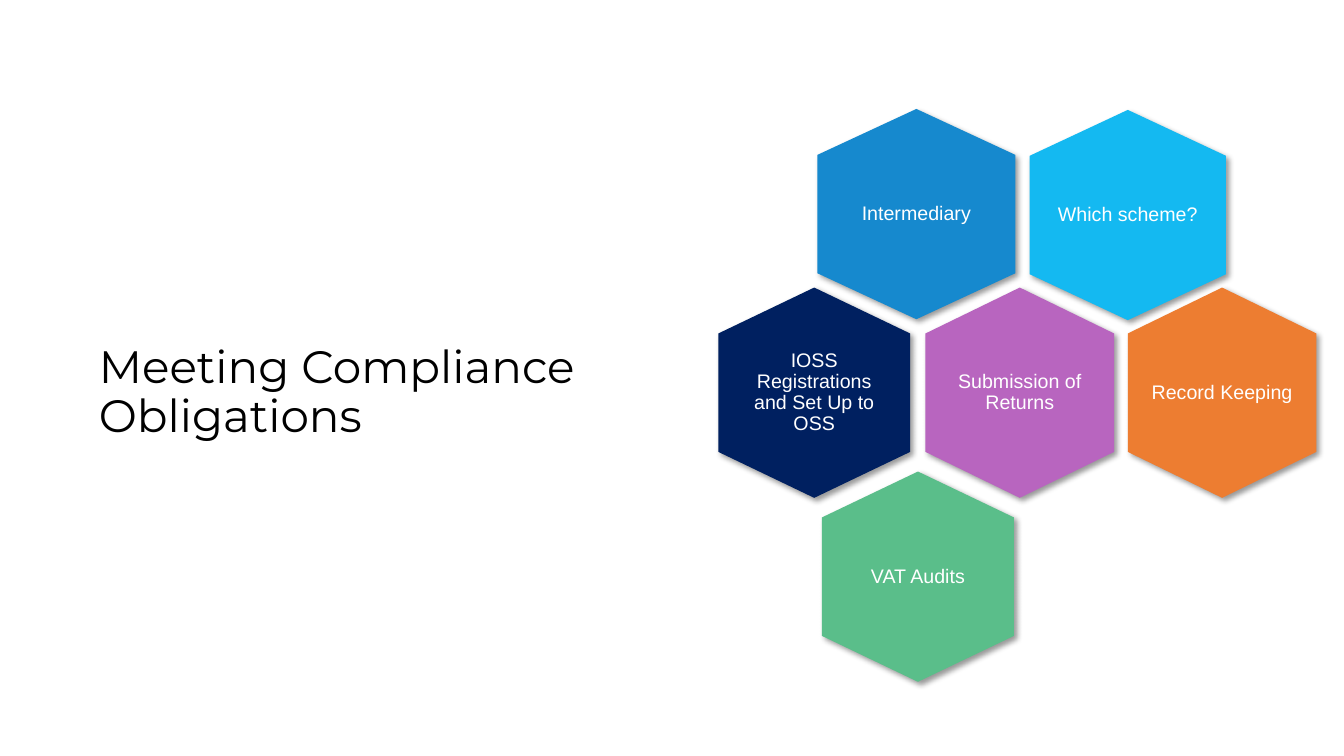
from lxml import etree
from pptx import Presentation
from pptx.dml.color import RGBColor
from pptx.enum import text
from pptx.oxml import ns
from pptx.util import Pt

BLACK = RGBColor(0x00, 0x00, 0x00)
WHITE = RGBColor(0xFF, 0xFF, 0xFF)
NAVY = RGBColor(0x00, 0x20, 0x60)
BLUE = RGBColor(0x16, 0x89, 0xCE)
PURPLE = RGBColor(0xB8, 0x65, 0xBF)
GREEN = RGBColor(0x5A, 0xBE, 0x8A)
SKY = RGBColor(0x14, 0xB9, 0xF1)
ORANGE = RGBColor(0xED, 0x7D, 0x31)

HEXAGON_HEIGHT = 150.2
SHOULDER = 32.8  # drop from the tip to the upper side corners
TOP_ROW, MIDDLE_ROW, BOTTOM_ROW = 77.8, 205.4, 336.8

# label, left, top, width, colour
HEXAGONS = [
    ("IOSS Registrations and Set Up to OSS", 513.1, MIDDLE_ROW, 137, NAVY),
    ("Intermediary", 583.9, TOP_ROW, 141.3, BLUE),
    ("Submission of Returns", 661.1, MIDDLE_ROW, 134.7, PURPLE),
    ("VAT Audits", 587.1, BOTTOM_ROW, 137.2, GREEN),
    ("Which scheme?", 735.5, TOP_ROW + 0.7, 140.2, SKY),
    ("Record Keeping", 805.6, MIDDLE_ROW, 134.7, ORANGE),
]


class SlideBuilder:
    def __init__(self, slide):
        self.slide = slide
        self.title_font, self.title_size = "Montserrat", 32.4
        self.label_font, self.label_size = "Arial", 14

    def format_paragraph(self, paragraph, font_name, size, colour, alignment):
        paragraph.alignment = alignment
        paragraph.line_spacing = 0.9
        paragraph.space_before = Pt(0)
        paragraph.font.name = font_name
        paragraph.font.size = Pt(size)
        paragraph.font.color.rgb = colour

    def title(self, words, left, top, width, height):
        shape = self.slide.shapes.title
        shape.left, shape.top = Pt(left), Pt(top)
        shape.width, shape.height = Pt(width), Pt(height)
        frame = shape.text_frame
        frame.word_wrap = True
        frame.auto_size = text.MSO_AUTO_SIZE.NONE
        frame.vertical_anchor = text.MSO_ANCHOR.BOTTOM
        paragraph = frame.paragraphs[0]
        paragraph.text = words
        self.format_paragraph(paragraph, self.title_font, self.title_size,
                              BLACK, text.PP_ALIGN.LEFT)

    def hexagon(self, label, left, top, width, colour):
        middle, right = left + width / 2, left + width
        bottom = top + HEXAGON_HEIGHT
        upper, lower = top + SHOULDER, bottom - SHOULDER
        corners = [(right, upper), (right, lower), (middle, bottom),
                   (left, lower), (left, upper)]
        builder = self.slide.shapes.build_freeform(Pt(middle), Pt(top))
        builder.add_line_segments([(Pt(x), Pt(y)) for x, y in corners])
        shape = builder.convert_to_shape()
        shape.fill.solid()
        shape.fill.fore_color.rgb = colour
        shape.line.fill.background()
        self.shadow(shape)

        frame = shape.text_frame
        frame.word_wrap = True
        frame.vertical_anchor = text.MSO_ANCHOR.MIDDLE
        frame.margin_left = frame.margin_right = Pt(15.8)
        frame.margin_top = frame.margin_bottom = Pt(17.3)
        paragraph = frame.paragraphs[0]
        paragraph.text = label
        self.format_paragraph(paragraph, self.label_font, self.label_size,
                              WHITE, text.PP_ALIGN.CENTER)

    def shadow(self, shape):
        """Give the shape a soft black shadow to its lower right."""
        shape.shadow.inherit = False
        effects = shape.element.spPr.find(ns.qn("a:effectLst"))
        outer = etree.SubElement(effects, ns.qn("a:outerShdw"), blurRad=str(Pt(4)),
                                 dist=str(Pt(3)), dir="2700000", algn="tl",
                                 rotWithShape="0")
        black = etree.SubElement(outer, ns.qn("a:srgbClr"), val=str(BLACK))
        etree.SubElement(black, ns.qn("a:alpha"), val="40000")


def main():
    presentation = Presentation()
    presentation.slide_width, presentation.slide_height = Pt(960), Pt(540)
    title_only = presentation.slide_layouts[5]
    builder = SlideBuilder(presentation.slides.add_slide(title_only))
    builder.title("Meeting Compliance\vObligations", 63.4, 272.2, 833.8, 47.5)
    for hexagon in HEXAGONS:
        builder.hexagon(*hexagon)
    presentation.save("out.pptx")


if __name__ == "__main__":
    main()
